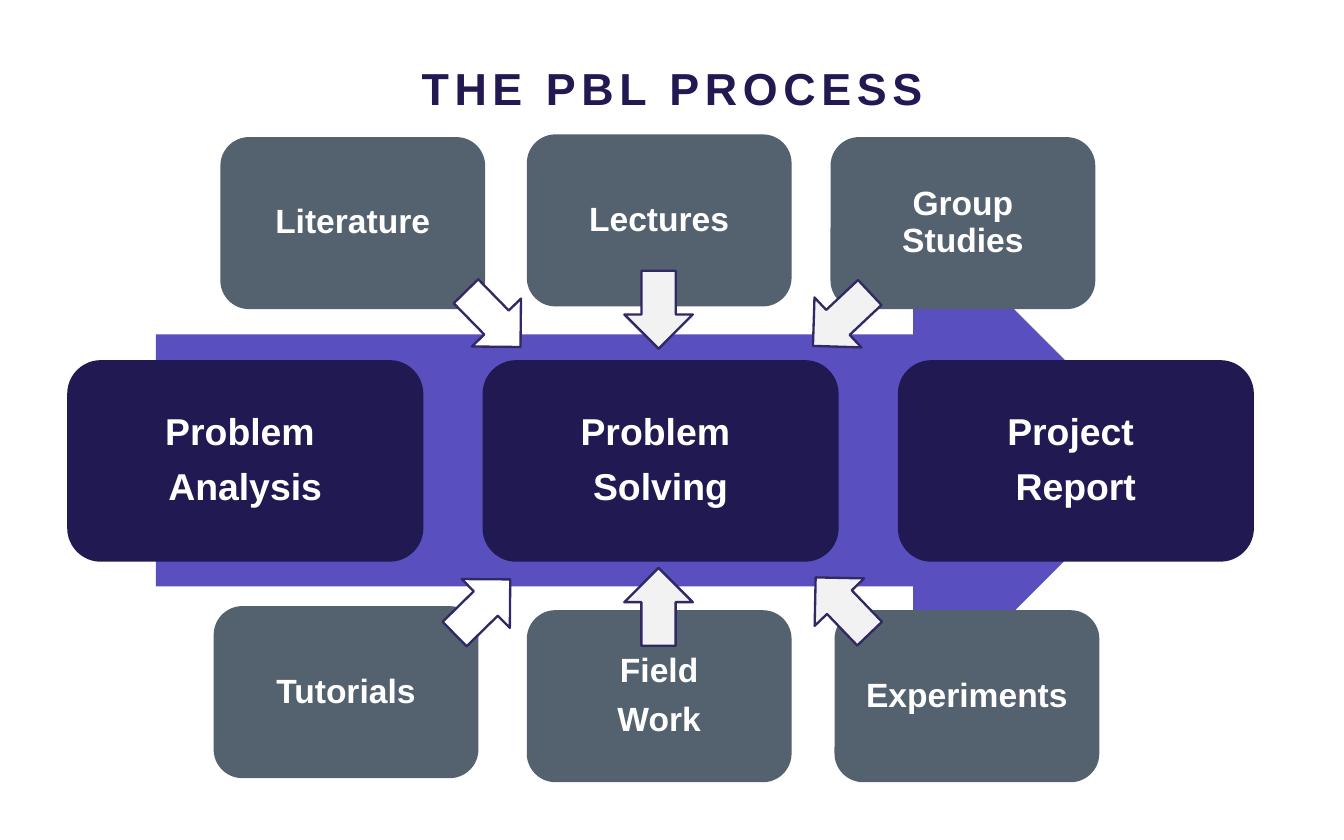
"""Build the PBL process slide: three stages on an arrow, fed by six activities."""
from pptx import Presentation
from pptx import util as u
from pptx.dml.color import RGBColor
from pptx.enum import shapes, text

THEME = {
    "font": "Arial",
    "navy": RGBColor.from_string("211A52"),
    "violet": RGBColor.from_string("594FBF"),
    "slate": RGBColor.from_string("54616E"),
    "outline": RGBColor.from_string("2F2964"),
    "white": RGBColor.from_string("FFFFFF"),
    "pale": RGBColor.from_string("F2F2F2"),
    "title": u.Pt(24),
    "stage": u.Pt(20),
    "activity": u.Pt(18),
}

presentation = Presentation()
presentation.slide_width = u.Inches(10)
presentation.slide_height = u.Inches(6.25)
slide = presentation.slides.add_slide(presentation.slide_layouts[5])
CELL = presentation.slide_width / 100


def add_block(preset, column, row, columns, rows, color):
    """Add a plain filled shape placed on the grid of cells."""
    lengths = [round(CELL * value) for value in (column, row, columns, rows)]
    shape = slide.shapes.add_shape(preset, *lengths)
    shape.shadow.inherit = False
    shape.fill.solid()
    shape.fill.fore_color.rgb = THEME[color]
    shape.line.fill.background()
    return shape


def write_lines(shape, lines, size, color, inset, paragraph_format):
    """Write one centred bold paragraph for each line."""
    frame = shape.text_frame
    frame_format = {"word_wrap": True, "vertical_anchor": text.MSO_ANCHOR.MIDDLE,
                    "auto_size": text.MSO_AUTO_SIZE.NONE}
    for side in ("left", "right", "top", "bottom"):
        frame_format[f"margin_{side}"] = u.Inches(inset)
    for name, value in frame_format.items():
        setattr(frame, name, value)
    for index, line in enumerate(lines):
        paragraph = frame.add_paragraph() if index else frame.paragraphs[0]
        run = paragraph.add_run()
        run.text = line
        for name, value in {"alignment": text.PP_ALIGN.CENTER, **paragraph_format}.items():
            setattr(paragraph, name, value)
        for name, value in {"name": THEME["font"], "size": THEME[size], "bold": True}.items():
            setattr(run.font, name, value)
        run.font.color.rgb = THEME[color]


title = slide.shapes.title
title_place = {"left": 5, "top": 1.3, "width": 90, "height": 10.4}
for name, value in title_place.items():
    setattr(title, name, round(CELL * value))
write_lines(title, ["THE PBL PROCESS"], "title", "navy", 0.1, {})
title.text_frame.paragraphs[0].runs[0].font._element.set("spc", "300")

add_block(shapes.MSO_SHAPE.RIGHT_ARROW, 11.6, 15.5, 75.1, 37.5, "violet")

stages = [("Problem ", "Analysis"), ("Problem ", "Solving"), ("Project ", "Report")]
for index, lines in enumerate(stages):
    stage = add_block(shapes.MSO_SHAPE.ROUNDED_RECTANGLE,
                      5 + 30.9 * index, 26.8, 26.5, 15, "navy")
    write_lines(stage, lines, "stage", "white", 0.08,
                {"line_spacing": 0.9, "space_after": u.Pt(8)})

activities = [
    (16.4, 10.2, ["Literature"]),
    (39.2, 10, ["Lectures"]),
    (61.8, 10.2, ["Group Studies"]),
    (39.2, 45.4, ["Field", "Work"]),
    (62.1, 45.4, ["Experiments"]),
    (15.9, 45.1, ["Tutorials"]),
]
for column, row, lines in activities:
    activity = add_block(shapes.MSO_SHAPE.ROUNDED_RECTANGLE, column, row, 19.7, 12.8, "slate")
    write_lines(activity, lines, "activity", "white", 0.1,
                {"line_spacing": 0.9, "space_after": u.Pt(7)})

arrows = [
    (33.8, 21.2, 45.6, "white"),
    (33, 42.6, 315.5, "white"),
    (46.1, 20.5, 90, "pale"),
    (59.7, 21.2, 136.8, "pale"),
    (46.1, 42.6, 270, "pale"),
    (59.8, 42.5, 226.2, "pale"),
]
for column, row, angle, color in arrows:
    arrow = add_block(shapes.MSO_SHAPE.RIGHT_ARROW, column, row, 5.8, 5.1, color)
    arrow.rotation = angle
    arrow.line.color.rgb = THEME["outline"]
    arrow.line.width = u.Pt(1.25)

presentation.save("out.pptx")
